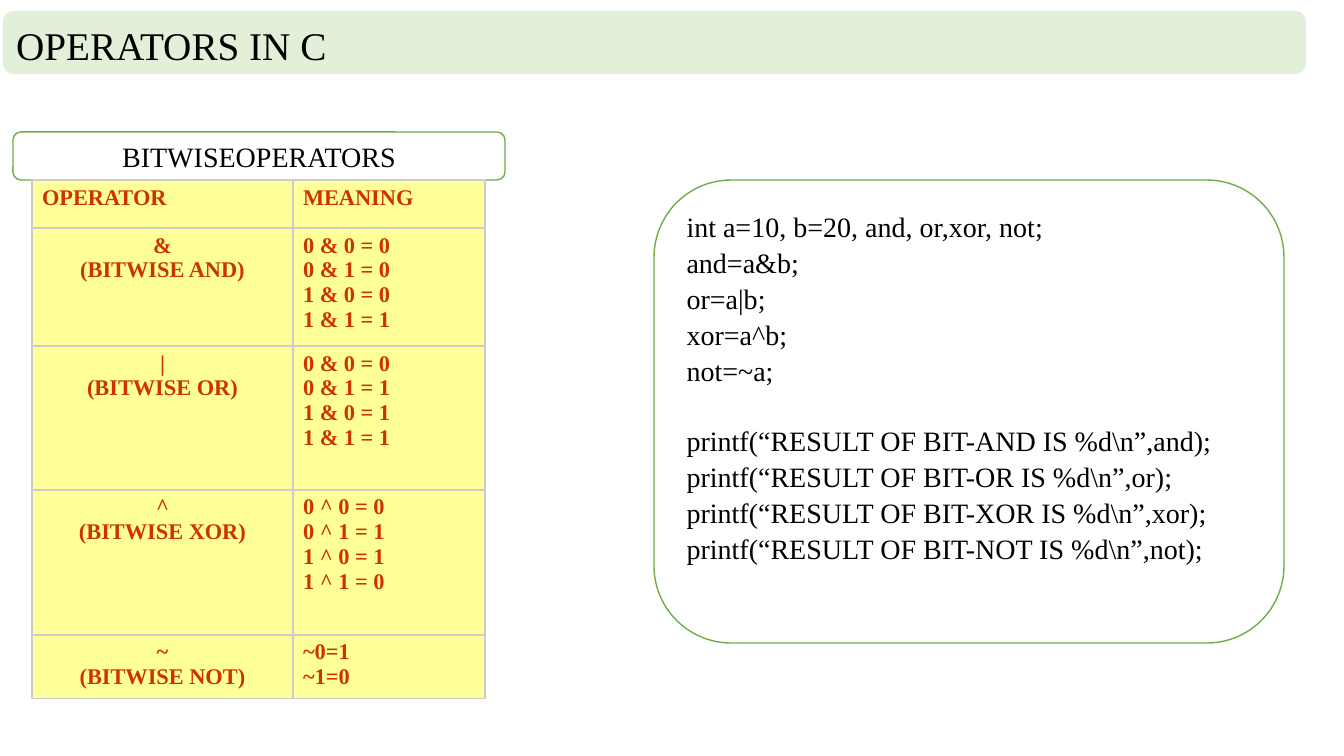
import pptx
import pptx.dml.color
import pptx.enum.shapes
import pptx.enum.text
import pptx.oxml
import pptx.oxml.ns
import pptx.util

ALIGN = pptx.enum.text.PP_ALIGN
ANCHOR = pptx.enum.text.MSO_ANCHOR
FONT = "Times New Roman"
EMU_PER_PX = 12192000 / 1344
COLORS = {
    "text": "000000",
    "title_bar": "E2F0D9",
    "outline": "70AD47",
    "cell": "FFFF99",
    "cell_text": "CC3300",
    "border": "CCCCCC",
}
COLUMN_WIDTHS = [261, 192]
ROW_HEIGHTS = [48, 118, 144, 145, 64]
OPERATORS = [
    (["OPERATOR"], ["MEANING"]),
    (["&", "(BITWISE AND)"], ["0 & 0 = 0", "0 & 1 = 0", "1 & 0 = 0", "1 & 1 = 1"]),
    (["|", "(BITWISE OR)"], ["0 & 0 = 0", "0 & 1 = 1", "1 & 0 = 1", "1 & 1 = 1"]),
    (["^", "(BITWISE XOR)"], ["0 ^ 0 = 0", "0 ^ 1 = 1", "1 ^ 0 = 1", "1 ^ 1 = 0"]),
    (["~", "(BITWISE NOT)"], ["~0=1", "~1=0"]),
]
DECLARATIONS = [
    "int a=10, b=20, and, or,xor, not;",
    "and=a&b;",
    "or=a|b;",
    "xor=a^b;",
    "not=~a;",
]
PRINTS = [
    "printf(“RESULT OF BIT-AND IS %d\\n”,and);",
    "printf(“RESULT OF BIT-OR IS %d\\n”,or);",
    "printf(“RESULT OF BIT-XOR IS %d\\n”,xor);",
    "printf(“RESULT OF BIT-NOT IS %d\\n”,not);",
]


def px(length):
    return pptx.util.Emu(round(length * EMU_PER_PX))


def rgb(name):
    return pptx.dml.color.RGBColor.from_string(COLORS[name])


def write_lines(text_frame, lines, size, align, color="text", bold=False):
    text_frame.text = "\n".join(lines)
    for paragraph in text_frame.paragraphs:
        paragraph.alignment = align
        paragraph.font.name = FONT
        paragraph.font.size = pptx.util.Pt(size)
        paragraph.font.bold = bold
        paragraph.font.color.rgb = rgb(color)


def add_box(slide, left, top, width, height, fill=None, line=None):
    shape = slide.shapes.add_shape(
        pptx.enum.shapes.MSO_SHAPE.FLOWCHART_ALTERNATE_PROCESS,
        px(left), px(top), px(width), px(height))
    shape.shadow.inherit = False
    if fill:
        shape.fill.solid()
        shape.fill.fore_color.rgb = rgb(fill)
    else:
        shape.fill.background()
    if line:
        shape.line.color.rgb = rgb(line)
        shape.line.width = pptx.util.Pt(1)
    else:
        shape.line.fill.background()
    return shape


def add_title(slide, text):
    add_box(slide, 3, 11, 1303, 63, fill="title_bar")
    title = slide.shapes.title
    title.left, title.top, title.width, title.height = px(6), px(13), px(1297), px(63)
    title.text_frame.vertical_anchor = ANCHOR.MIDDLE
    write_lines(title.text_frame, [text], 28, ALIGN.LEFT)
    slide.shapes._spTree.append(title._element)


def add_heading(slide, text):
    heading = add_box(slide, 13, 132, 492, 48, line="outline")
    heading.text_frame.vertical_anchor = ANCHOR.MIDDLE
    write_lines(heading.text_frame, [text], 20, ALIGN.CENTER)


def set_borders(cell):
    properties = cell._tc.get_or_add_tcPr()
    for position, side in enumerate(("lnL", "lnR", "lnT", "lnB")):
        border = pptx.oxml.parse_xml(
            f'<a:{side} {pptx.oxml.ns.nsdecls("a")} w="12700"><a:solidFill>'
            f'<a:srgbClr val="{COLORS["border"]}"/></a:solidFill></a:{side}>')
        properties.insert(position, border)


def add_operator_table(slide):
    frame = slide.shapes.add_table(
        len(OPERATORS), len(COLUMN_WIDTHS), px(32), px(180),
        px(sum(COLUMN_WIDTHS)), px(sum(ROW_HEIGHTS)))
    table = frame.table
    table.first_row = False
    table.horz_banding = False
    for column, width in zip(table.columns, COLUMN_WIDTHS):
        column.width = px(width)
    for row_index, contents in enumerate(OPERATORS):
        table.rows[row_index].height = px(ROW_HEIGHTS[row_index])
        for column_index, lines in enumerate(contents):
            cell = table.cell(row_index, column_index)
            cell.fill.solid()
            cell.fill.fore_color.rgb = rgb("cell")
            is_operator = row_index > 0 and column_index == 0
            align = ALIGN.CENTER if is_operator else ALIGN.JUSTIFY
            write_lines(cell.text_frame, lines, 16, align, "cell_text", True)
            set_borders(cell)


def add_code(slide):
    text_frame = add_box(slide, 654, 180, 630, 463, line="outline").text_frame
    text_frame.vertical_anchor = ANCHOR.TOP
    write_lines(text_frame, DECLARATIONS + PRINTS, 20, ALIGN.LEFT)
    for paragraph in text_frame.paragraphs:
        paragraph.line_spacing = 1.07
    text_frame.paragraphs[len(DECLARATIONS)].space_before = pptx.util.Pt(24)


def main():
    presentation = pptx.Presentation()
    presentation.slide_width = px(1344)
    presentation.slide_height = px(756)
    slide = presentation.slides.add_slide(presentation.slide_layouts[5])
    add_title(slide, "OPERATORS IN C")
    add_heading(slide, "BITWISEOPERATORS")
    add_operator_table(slide)
    add_code(slide)
    presentation.save("out.pptx")


if __name__ == "__main__":
    main()
